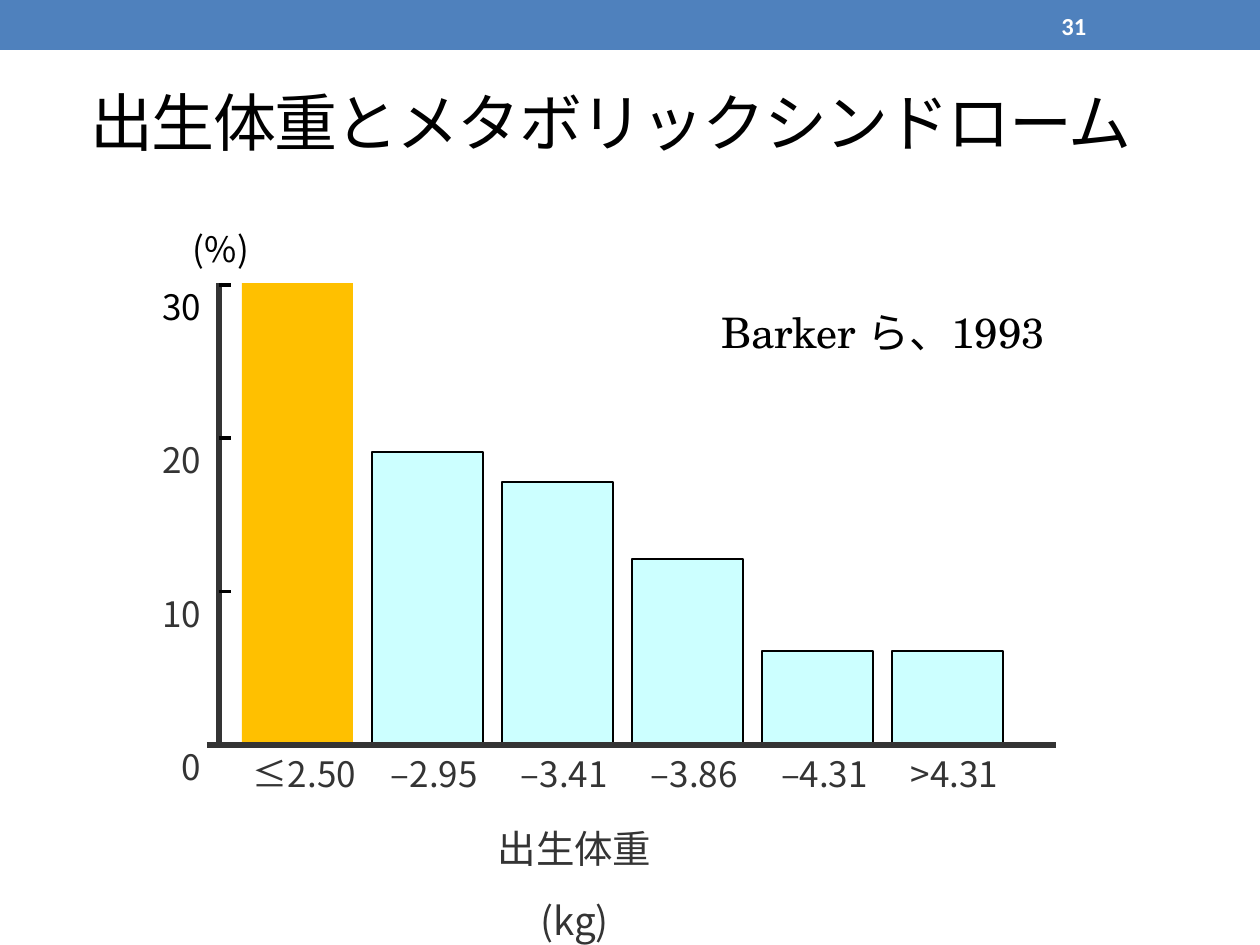
from dataclasses import dataclass

from lxml.etree import SubElement
from pptx import Presentation
from pptx.dml.color import RGBColor
from pptx.enum.shapes import MSO_CONNECTOR, MSO_SHAPE
from pptx.enum.text import MSO_ANCHOR, MSO_AUTO_SIZE, PP_ALIGN
from pptx.oxml.ns import qn
from pptx.util import Emu, Pt


@dataclass(frozen=True)
class Theme:
    # Fonts
    sans: str = "Noto Sans CJK JP"
    serif: str = "TeX Gyre Schola"
    number: str = "Calibri"
    # Colours
    band: str = "4F81BD"
    black: str = "000000"
    grey: str = "343434"
    white: str = "FFFFFF"
    highlight: str = "FFC000"
    bar: str = "CCFFFF"
    # Type sizes
    title: int = 36
    citation: int = 24
    axis_title: int = 22
    label: int = 20
    page: int = 14


T = Theme()
PX_PER_INCH = 126

# Share (%) by birth weight (kg)
BARS = [("≤2.50", 30), ("–2.95", 19), ("–3.41", 17),
        ("–3.86", 12), ("–4.31", 6), (">4.31", 6)]
BAR_LEFT, BAR_STEP, BAR_WIDTH, BAR_BASE = 242, 130, 111, 743
AXIS_X, AXIS_Y, AXIS_TOP = 219, 745, 283
PLOT_HEIGHT, MAX_VALUE = 460, 30


def px(n):
    return Emu(round(n * 914400 / PX_PER_INCH))


def box(*lengths):
    return [px(n) for n in lengths]


def height_of(value):
    return round(value * PLOT_HEIGHT / MAX_VALUE)


def style(p, size, font, color, bold=False):
    p.font.size = Pt(size)
    p.font.name = font
    p.font.bold = bold
    p.font.color.rgb = RGBColor.from_string(color)
    rPr = p._p.pPr.find(qn("a:defRPr"))
    SubElement(rPr, qn("a:ea")).set("typeface", T.sans)
    return rPr


def add_rect(s, x, y, w, h, fill, line=None):
    sp = s.shapes.add_shape(MSO_SHAPE.RECTANGLE, *box(x, y, w, h))
    sp.shadow.inherit = False
    sp.fill.solid()
    sp.fill.fore_color.rgb = RGBColor.from_string(fill)
    if line:
        sp.line.color.rgb = RGBColor.from_string(line)
        sp.line.width = Pt(0.75)
    else:
        sp.line.fill.background()


def add_line(s, x1, y1, x2, y2, color, width):
    cx = s.shapes.add_connector(MSO_CONNECTOR.STRAIGHT, *box(x1, y1, x2, y2))
    cx.line.color.rgb = RGBColor.from_string(color)
    cx.line.width = Pt(width)
    SubElement(cx._element.spPr, qn("a:effectLst"))


def add_label(s, text, x, y, w, h, size=T.label, font=T.sans, color=T.grey,
              align=PP_ALIGN.CENTER, wrap=False, grow=True, inset=5):
    tf = s.shapes.add_textbox(*box(x, y, w, h)).text_frame
    tf.word_wrap = wrap
    tf.auto_size = MSO_AUTO_SIZE.SHAPE_TO_FIT_TEXT if grow else MSO_AUTO_SIZE.NONE
    tf.margin_left = tf.margin_right = px(inset)
    tf.margin_top = tf.margin_bottom = px(inset)
    p = tf.paragraphs[0]
    p.text = text
    p.alignment = align
    p.line_spacing = 1.55
    p.space_before = Pt(17)
    style(p, size, font, color)
    return tf


def add_title(s, text):
    title = s.shapes.title
    title.left, title.top, title.width, title.height = box(78, 43, 1103, 157)
    tf = title.text_frame
    tf.vertical_anchor = MSO_ANCHOR.MIDDLE
    tf.auto_size = MSO_AUTO_SIZE.NONE
    p = tf.paragraphs[0]
    p.text = text
    p.alignment = PP_ALIGN.LEFT
    style(p, T.title, T.sans, T.black).set("spc", "-100")


def add_page_number(s, text):
    tf = s.shapes.add_textbox(*box(1049, 3, 147, 45)).text_frame
    tf.word_wrap = True
    tf.vertical_anchor = MSO_ANCHOR.MIDDLE
    p = tf.paragraphs[0]
    p.text = text
    style(p, T.page, T.number, T.white, bold=True)


def add_bars(s):
    for i, (name, value) in enumerate(BARS):
        x, h = BAR_LEFT + i * BAR_STEP, height_of(value)
        fill, line = (T.bar, T.black) if i else (T.highlight, None)
        add_rect(s, x, BAR_BASE - h, BAR_WIDTH, h, fill, line)
        add_label(s, name, x + 5, 724, 115, 77)


def add_axes(s):
    add_line(s, 207, AXIS_Y, 1056, AXIS_Y, T.grey, 3)
    add_line(s, AXIS_X, AXIS_TOP, AXIS_X, AXIS_Y, T.grey, 3)
    # Ticks and their values
    for value in range(0, MAX_VALUE + 1, 10):
        y = AXIS_Y - height_of(value)
        if value:
            add_line(s, AXIS_X, y, AXIS_X + 12, y, T.black, 1.75)
        w = 11 + 26 * len(str(value))
        add_label(s, str(value), 206 - w, y - 28, w, 77, align=PP_ALIGN.RIGHT,
                  color=T.black if value == MAX_VALUE else T.grey)
    # Axis titles
    add_label(s, "(%)", 179, 199, 84, 73, color=T.black, wrap=True)
    tf = add_label(s, "出生体重 (kg)", 496, 800, 233, 68, size=T.axis_title,
                   wrap=True, grow=False, inset=0)
    tf.margin_right = px(76)


def main():
    prs = Presentation()
    prs.slide_width, prs.slide_height = box(1260, 945)
    s = prs.slides.add_slide(prs.slide_layouts[5])

    # Header
    add_rect(s, 0, 0, 1260, 50, T.band)
    add_title(s, "出生体重とメタボリックシンドローム")
    add_page_number(s, "31")

    # Bar chart
    add_bars(s)
    add_axes(s)

    # Citation
    tf = add_label(s, "Barker ら、1993", 693, 283, 357, 79, size=T.citation,
                   font=T.serif, color=T.black, align=PP_ALIGN.RIGHT,
                   wrap=True, grow=False)
    tf.vertical_anchor = MSO_ANCHOR.BOTTOM

    prs.save("out.pptx")


if __name__ == "__main__":
    main()
